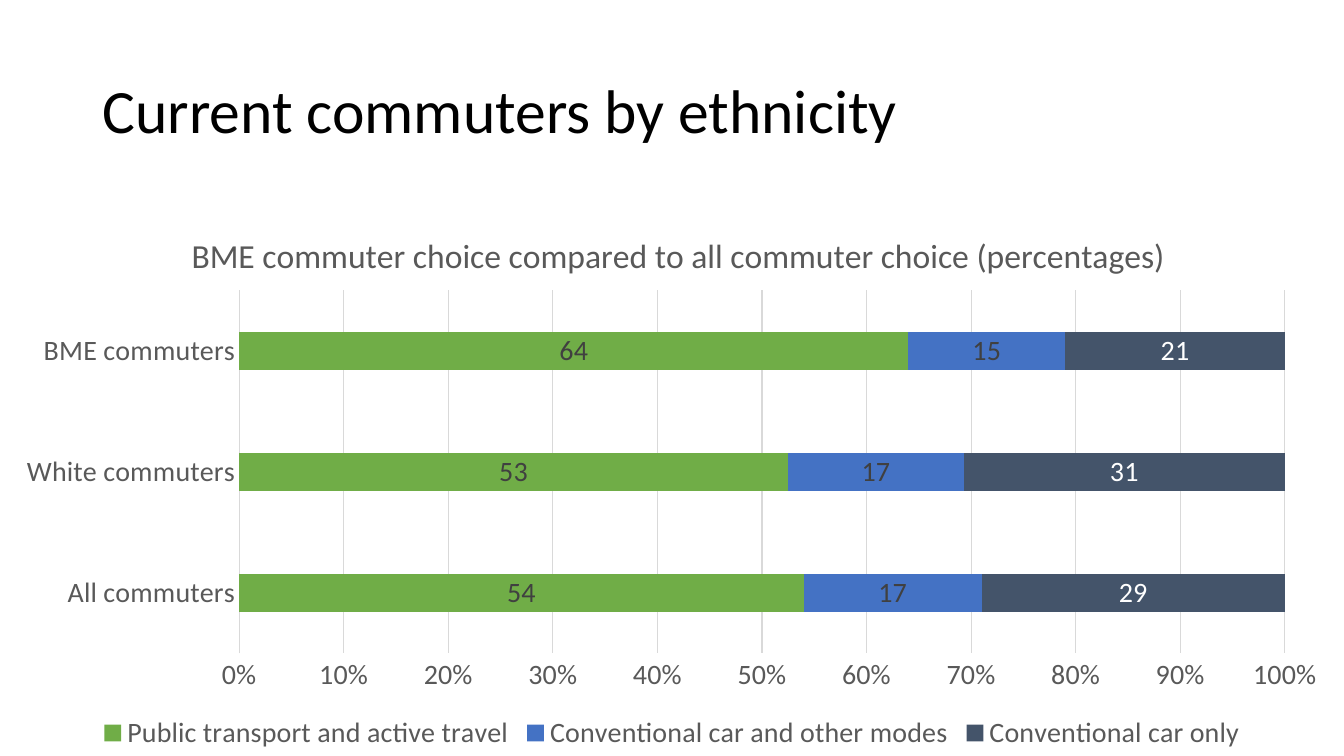
"""Build a slide with a stacked bar chart of commuters by ethnicity."""
from lxml import etree
from pptx import Presentation
from pptx.chart.data import CategoryChartData
from pptx.dml.color import RGBColor
from pptx.enum.chart import (XL_CHART_TYPE, XL_LABEL_POSITION,
                             XL_LEGEND_POSITION, XL_TICK_MARK)
from pptx.enum.text import MSO_ANCHOR, MSO_AUTO_SIZE, PP_ALIGN
from pptx.oxml.ns import qn
from pptx.util import Pt

BARS = XL_CHART_TYPE.BAR_STACKED_100
CENTER = XL_LABEL_POSITION.CENTER
BOTTOM = XL_LEGEND_POSITION.BOTTOM
NO_TICK = XL_TICK_MARK.NONE
MIDDLE = MSO_ANCHOR.MIDDLE
NO_FIT = MSO_AUTO_SIZE.NONE
LEFT = PP_ALIGN.LEFT

BLACK = RGBColor(0x00, 0x00, 0x00)
WHITE = RGBColor(0xFF, 0xFF, 0xFF)
GRAY = RGBColor(0x59, 0x59, 0x59)
DARK = RGBColor(0x40, 0x40, 0x40)
PALE = RGBColor(0xD9, 0xD9, 0xD9)
GREEN = RGBColor(0x70, 0xAD, 0x47)
BLUE = RGBColor(0x44, 0x72, 0xC4)
SLATE = RGBColor(0x44, 0x54, 0x6A)

GROUPS = ["All commuters", "White commuters", "BME commuters"]
MODES = [
    ("Public transport and active travel", (54, 53, 64), GREEN, DARK),
    ("Conventional car and other modes", (17, 17, 15), BLUE, DARK),
    ("Conventional car only", (29, 31, 21), SLATE, WHITE),
]


class Deck:
    """Hold the style and the current slide."""

    face = "Calibri"
    small = 20

    def __init__(self):
        """Start a wide deck with one title slide."""
        self.prs = Presentation()
        self.prs.slide_width, self.prs.slide_height = Pt(960), Pt(540)
        self.slide = self.prs.slides.add_slide(self.prs.slide_layouts[5])

    def style(self, font, size, color):
        """Set face, size and colour of a font."""
        font.name, font.size = self.face, Pt(size)
        font.bold = False
        font.color.rgb = color

    def line(self, form):
        """Give a line the pale hairline look."""
        form.line.color.rgb = PALE
        form.line.width = Pt(0.75)

    def place(self, node, index, **parts):
        """Fix the layout of a chart part, in shares of the chart."""
        for old in node.findall(qn("c:layout")):
            node.remove(old)
        layout = etree.Element(qn("c:layout"))
        node.insert(index, layout)
        manual = etree.SubElement(layout, qn("c:manualLayout"))
        if "w" in parts:
            etree.SubElement(manual, qn("c:layoutTarget"), val="inner")
        for mode in ("xMode", "yMode"):
            etree.SubElement(manual, qn("c:" + mode), val="edge")
        for name, value in parts.items():
            etree.SubElement(manual, qn("c:" + name), val=str(value))

    def title(self, text, left, top, width, height):
        """Fill and move the title placeholder."""
        box = self.slide.shapes.title
        box.left, box.top = Pt(left), Pt(top)
        box.width, box.height = Pt(width), Pt(height)
        frame = box.text_frame
        frame.auto_size, frame.vertical_anchor = NO_FIT, MIDDLE
        para = frame.paragraphs[0]
        para.alignment, para.line_spacing = LEFT, 0.9
        run = para.add_run()
        run.text = text
        self.style(run.font, 44, BLACK)

    def chart(self, text, left, top, width, height):
        """Add the stacked bar chart."""
        data = CategoryChartData()
        data.categories = GROUPS
        for name, values, _, _ in MODES:
            data.add_series(name, values)
        chart = self.slide.shapes.add_chart(
            BARS, Pt(left), Pt(top), Pt(width), Pt(height), data).chart
        self.style(chart.font, self.small, BLACK)
        self.head(chart, text)
        self.axes(chart)
        self.bars(chart.plots[0])
        chart.has_legend = True
        chart.legend.position = BOTTOM
        chart.legend.include_in_layout = False
        self.style(chart.legend.font, self.small, GRAY)
        area = chart.element.find(".//" + qn("c:plotArea"))
        self.place(area, 0, x=0.178, y=0.16, w=0.778, h=0.655)

    def head(self, chart, text):
        """Write the heading of the chart."""
        chart.has_title = True
        run = chart.chart_title.text_frame.paragraphs[0].add_run()
        run.text = text
        self.style(run.font, 24, GRAY)
        node = chart.element.find(".//" + qn("c:title"))
        self.place(node, 1, x=0.138, y=0.046)

    def axes(self, chart):
        """Format both axes and the grid."""
        for axis in (chart.category_axis, chart.value_axis):
            axis.major_tick_mark = axis.minor_tick_mark = NO_TICK
            self.style(axis.tick_labels.font, self.small, GRAY)
        self.line(chart.category_axis.format)
        axis = chart.value_axis
        axis.format.line.fill.background()
        axis.has_major_gridlines = True
        self.line(axis.major_gridlines.format)
        axis.minimum_scale, axis.maximum_scale, axis.major_unit = 0, 1, 0.1
        axis.tick_labels.number_format = "0%"
        axis.tick_labels.number_format_is_linked = False

    def bars(self, plot):
        """Colour and label the bars."""
        plot.gap_width, plot.overlap = 219, 100
        plot.vary_by_categories = False
        for series, (_, _, fill, ink) in zip(plot.series, MODES):
            series.format.fill.solid()
            series.format.fill.fore_color.rgb = fill
            labels = series.data_labels
            labels.show_value, labels.position = True, CENTER
            self.style(labels.font, self.small, ink)


def main():
    """Build and save the deck."""
    deck = Deck()
    deck.title("Current commuters by ethnicity", 66, 28.75, 828, 104.4)
    deck.chart("BME commuter choice compared to all commuter choice "
               "(percentages)", 0, 144, 960, 396)
    deck.prs.save("out.pptx")


if __name__ == "__main__":
    main()
